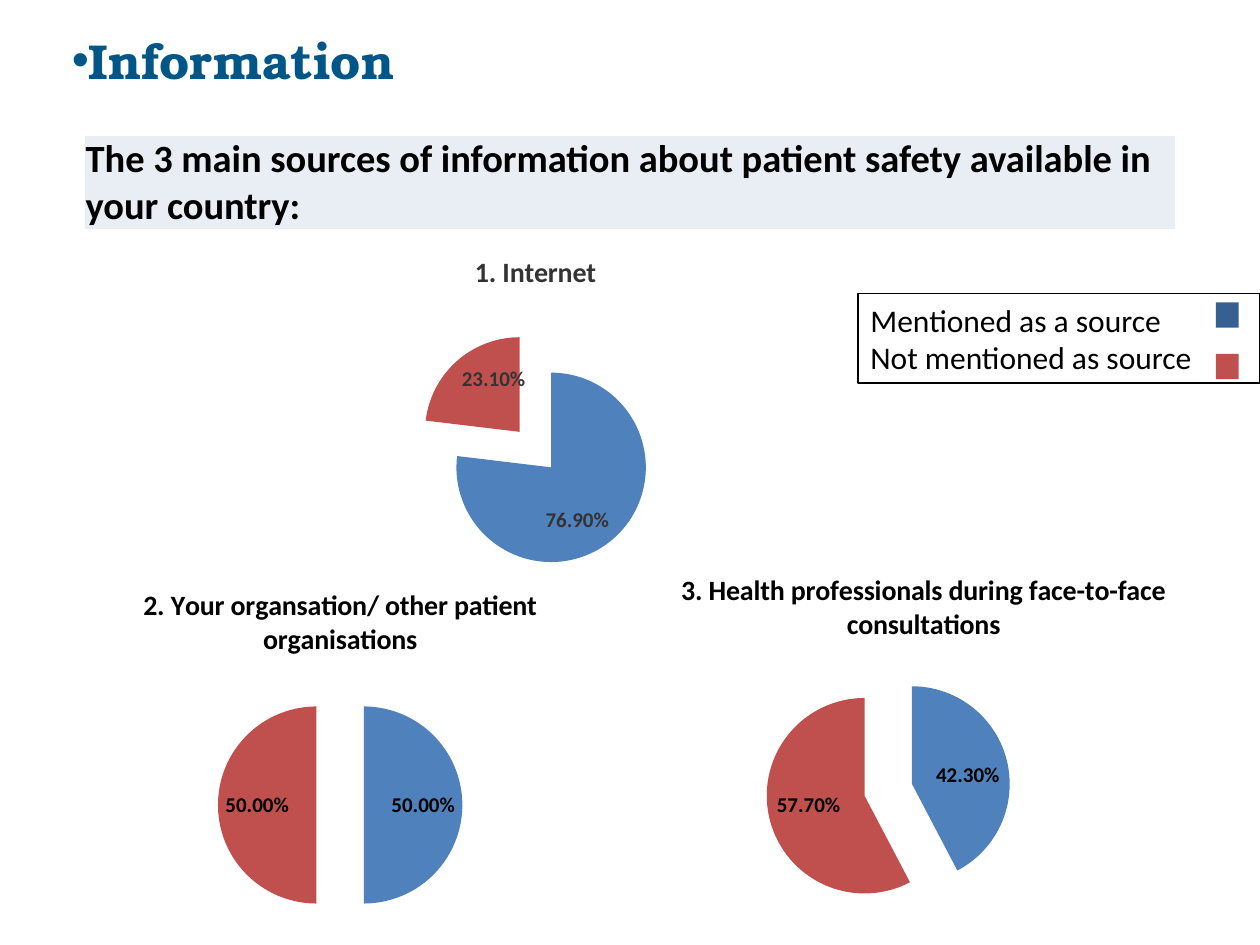
"""Build the slide on the main sources of patient safety information."""
from lxml.etree import SubElement
from pptx import Presentation
from pptx.chart.data import CategoryChartData
from pptx.dml.color import RGBColor
from pptx.enum.chart import XL_CHART_TYPE, XL_LABEL_POSITION
from pptx.enum.shapes import MSO_SHAPE
from pptx.enum.text import MSO_ANCHOR, PP_ALIGN
from pptx.oxml import parse_xml
from pptx.oxml.ns import nsdecls, qn
from pptx.util import Inches, Pt

COLORS = {
    "title": "005686", "text": "000000", "gray": "333333", "band": "E9EDF4",
    "border": "FFFFFF", "key": "376092", "yes": "4F81BD", "no": "C0504D",
}


class SlideBuilder:
    """Hold the style and the current slide."""

    def __init__(self, page, body_font="Calibri", title_font="TeX Gyre Bonum"):
        self.page = page
        self.body_font = body_font
        self.title_font = title_font

    def color(self, name):
        return RGBColor.from_string(COLORS[name])

    def style(self, font, size, color="text", bold=False, name=None):
        font.name = name or self.body_font
        font.size = Pt(size)
        font.bold = bold
        font.color.rgb = self.color(color)

    def title(self, text, *bounds):
        box = self.page.shapes.title
        box.left, box.top, box.width, box.height = map(Inches, bounds)
        box.text_frame.text = text
        box.text_frame.vertical_anchor = MSO_ANCHOR.MIDDLE
        paragraph = box.text_frame.paragraphs[0]
        paragraph.alignment = PP_ALIGN.LEFT
        properties = paragraph._p.get_or_add_pPr()
        properties.set("marL", "0")
        properties.set("indent", "0")
        SubElement(properties, qn("a:buFont"), typeface="Arial")
        SubElement(properties, qn("a:buChar"), char="•")
        self.style(paragraph.runs[0].font, 28, "title", True, self.title_font)

    def banner(self, text, *bounds):
        table = self.page.shapes.add_table(1, 1, *map(Inches, bounds)).table
        table.first_row = table.horz_banding = False
        cell = table.cell(0, 0)
        cell.text_frame.text = text
        cell.vertical_anchor = MSO_ANCHOR.MIDDLE
        cell.margin_left = cell.margin_right = cell.margin_top = Inches(0.01)
        cell.margin_bottom = 0
        self.style(cell.text_frame.paragraphs[0].runs[0].font, 22, bold=True)
        properties = cell._tc.get_or_add_tcPr()
        for side in ("lnL", "lnR", "lnT", "lnB"):
            line = SubElement(properties, qn(f"a:{side}"), w=str(Pt(1)))
            fill = SubElement(line, qn("a:solidFill"))
            SubElement(fill, qn("a:srgbClr"), val=COLORS["border"])
        cell.fill.solid()
        cell.fill.fore_color.rgb = self.color("band")

    def rectangle(self, *bounds):
        shape = self.page.shapes.add_shape(MSO_SHAPE.RECTANGLE, *map(Inches, bounds))
        shape.shadow.inherit = False
        return shape

    def legend(self, lines, *bounds):
        box = self.rectangle(*bounds)
        box.fill.background()
        box.line.color.rgb = self.color("text")
        box.line.width = Pt(0.75)
        box.text_frame.text = "\n".join(lines)
        for paragraph in box.text_frame.paragraphs:
            paragraph.alignment = PP_ALIGN.LEFT
            self.style(paragraph.runs[0].font, 18)

    def swatch(self, color, *bounds):
        box = self.rectangle(*bounds)
        box.fill.solid()
        box.fill.fore_color.rgb = self.color(color)
        box.line.fill.background()

    def pie(self, title, values, bounds, corner, diameter, color="text", explosion=25):
        data = CategoryChartData(number_format="0.00%")
        data.categories = ["1", "2"]
        data.add_series("Series 1", values)
        chart = self.page.shapes.add_chart(
            XL_CHART_TYPE.PIE, *map(Inches, bounds), data).chart
        chart.has_legend = False
        self.style(chart.font, 10, color)
        chart.has_title = True
        chart.chart_title.include_in_layout = False
        chart.chart_title.text_frame.text = title
        run = chart.chart_title.text_frame.paragraphs[0].runs[0]
        self.style(run.font, 16, color, True)
        plot = chart.plots[0]
        plot.vary_by_categories = True
        series = plot.series[0]
        series._element.find(qn("c:tx")).addnext(
            parse_xml(f'<c:explosion {nsdecls("c")} val="{explosion}"/>'))
        for index, name in enumerate(("yes", "no")):
            fill = series.points[index].format.fill
            fill.solid()
            fill.fore_color.rgb = self.color(name)
        plot.has_data_labels = True
        labels = plot.data_labels
        labels.show_value = True
        labels.show_percentage = False
        labels.number_format = "0.00%"
        labels.number_format_is_linked = False
        labels.position = XL_LABEL_POSITION.INSIDE_END
        self.style(labels.font, 12, color, True)
        self.place_plot(chart, bounds, corner, diameter)

    def place_plot(self, chart, bounds, corner, diameter):
        area = chart._chartSpace.chart.plotArea
        for old in area.findall(qn("c:layout")):
            area.remove(old)
        layout = parse_xml(f'<c:layout {nsdecls("c")}/>')
        manual = SubElement(layout, qn("c:manualLayout"))
        settings = {
            "layoutTarget": "inner", "xMode": "edge", "yMode": "edge",
            "x": corner[0] / bounds[2], "y": corner[1] / bounds[3],
            "w": diameter / bounds[2], "h": diameter / bounds[3],
        }
        for tag, value in settings.items():
            SubElement(manual, qn(f"c:{tag}"), val=str(value))
        area.insert(0, layout)


def main():
    deck = Presentation()
    deck.slide_width, deck.slide_height = Inches(10), Inches(7.5)
    builder = SlideBuilder(deck.slides.add_slide(deck.slide_layouts[5]))
    builder.title("Information", 0.47, 0.16, 7.89, 0.63)
    builder.banner(
        "The 3 main sources of information about patient safety available in your country:",
        0.67, 1.07, 8.66, 0.74)
    builder.legend(["Mentioned as a source", "Not mentioned as source"],
                   6.81, 2.33, 3.19, 0.71)
    for color, top in (("key", 2.4), ("no", 2.81)):
        builder.swatch(color, 9.65, top, 0.18, 0.2)
    builder.pie("1. Internet", (0.769, 0.231), (1.85, 1.86, 4.8, 2.91),
                (1.46, 0.77), 1.88, color="gray")
    builder.pie("3. Health professionals during face-to-face consultations",
                (0.423, 0.577), (4.83, 4.38, 5, 3), (1.25, 0.92), 1.94)
    builder.pie("2. Your organsation/ other patient organisations",
                (0.5, 0.5), (0.2, 4.5, 5, 3), (1.53, 0.92), 1.94, explosion=24)
    deck.save("out.pptx")


if __name__ == "__main__":
    main()
